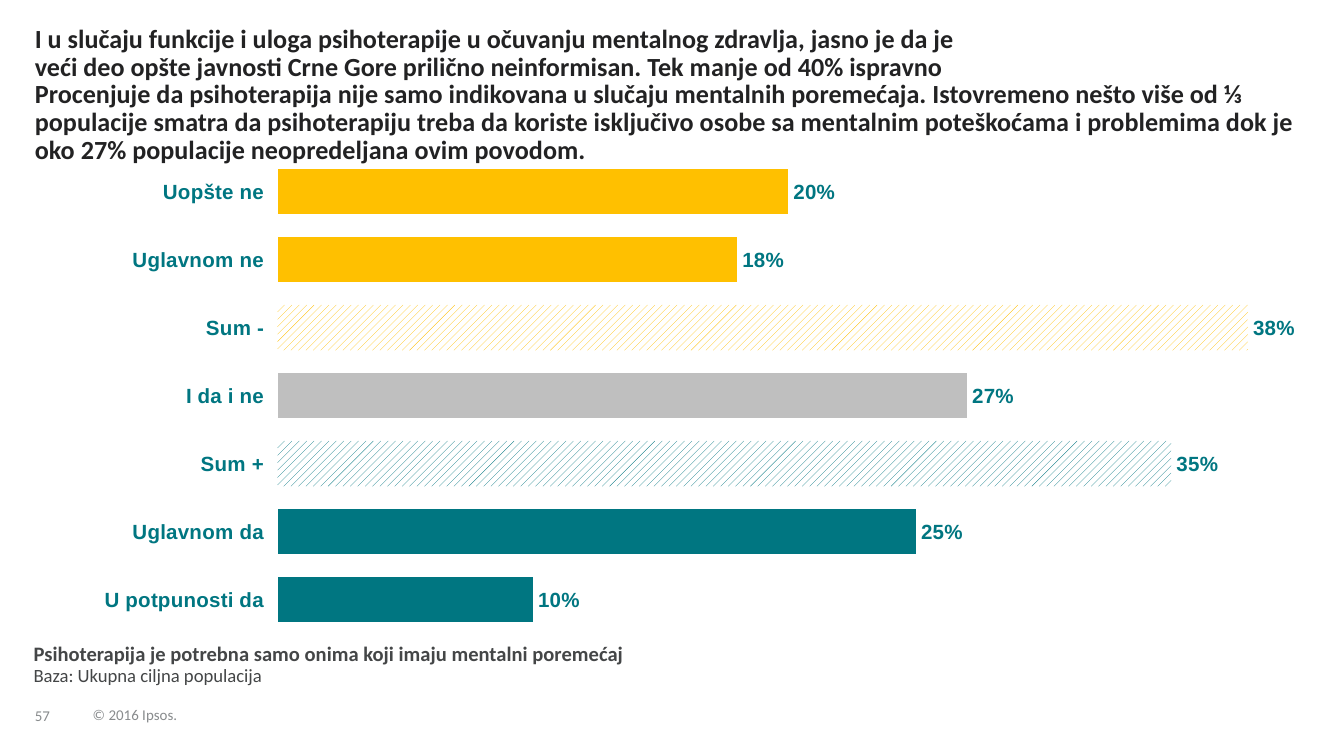
from lxml import etree
from pptx import Presentation
from pptx.chart.data import CategoryChartData
from pptx.dml.color import RGBColor
from pptx.enum.chart import XL_CHART_TYPE, XL_LABEL_POSITION, XL_TICK_LABEL_POSITION, XL_TICK_MARK
from pptx.enum.dml import MSO_PATTERN
from pptx.enum.text import MSO_ANCHOR
from pptx.oxml.ns import qn
from pptx.util import Pt

COLORS = {
    "heading": "222223",
    "caption": "444647",
    "footer": "888B8D",
    "yes": "007681",
    "no": "FFC000",
    "neutral": "BFBFBF",
    "white": "FFFFFF",
}


def color(name):
    return RGBColor.from_string(COLORS[name])


def add_text(text, left, top, width, height, size=14, bold=True, ink="heading",
             line_spacing=0.9, anchor=MSO_ANCHOR.TOP, wrap=True, second_line=None):
    """Add a text box; second_line follows a line break, 1 pt smaller and not bold."""
    box = slide.shapes.add_textbox(Pt(left), Pt(top), Pt(width), Pt(height))
    frame = box.text_frame
    frame.margin_left = frame.margin_right = frame.margin_top = frame.margin_bottom = 0
    frame.word_wrap = wrap
    frame.vertical_anchor = anchor
    paragraph = frame.paragraphs[0]
    paragraph.line_spacing = line_spacing
    lines = [(text, size, bold)]
    if second_line:
        lines.append((second_line, size - 1, False))
    for index, (content, points, heavy) in enumerate(lines):
        if index:
            paragraph.add_line_break()
        run = paragraph.add_run()
        run.text = content
        run.font.name = "Calibri"
        run.font.size = Pt(points)
        run.font.bold = heavy
        run.font.color.rgb = color(ink)


presentation = Presentation()
presentation.slide_width = Pt(720)
presentation.slide_height = Pt(405)
slide = presentation.slides.add_slide(presentation.slide_layouts[6])

# Footer
footer = dict(size=8, bold=False, ink="footer", line_spacing=0.85,
              anchor=MSO_ANCHOR.BOTTOM, wrap=False)
add_text("57", 18.7, 369.4, 24.5, 18.7, **footer)
add_text("© 2016 Ipsos.", 49.7, 374.4, 54.7, 13, **footer)

# Heading and caption
add_text("I u slučaju funkcije i uloga psihoterapije u očuvanju mentalnog zdravlja, "
         "jasno je da je veći deo opšte javnosti Crne Gore prilično neinformisan. "
         "Tek manje od 40% ispravno", 18.7, 13.7, 516.2, 30.2)
add_text("Psihoterapija je potrebna samo onima koji imaju mentalni poremećaj",
         18, 344.2, 684.7, 33.8, size=11, ink="caption", line_spacing=0.95,
         second_line="Baza: Ukupna ciljna populacija")

# Answers: label, percentage, colour, hatched subtotal
answers = [
    ("Uopšte ne", 20, "no", False),
    ("Uglavnom ne", 18, "no", False),
    ("Sum -", 38, "no", True),
    ("I da i ne", 27, "neutral", False),
    ("Sum +", 35, "yes", True),
    ("Uglavnom da", 25, "yes", False),
    ("U potpunosti da", 10, "yes", False),
]
chart_data = CategoryChartData(number_format='0"%"')
chart_data.categories = [answer[0] for answer in answers]
chart_data.add_series("Series 1", [answer[1] for answer in answers])
chart = slide.shapes.add_chart(XL_CHART_TYPE.BAR_CLUSTERED, Pt(18.7), Pt(79.2),
                               Pt(684), Pt(265.7), chart_data).chart
chart.has_legend = False
chart.has_title = False
chart.font.name = "Arial"
chart.font.size = Pt(11)
chart.font.bold = True
chart.font.color.rgb = color("yes")

# Axes
category_axis = chart.category_axis
category_axis.reverse_order = True
category_axis.major_tick_mark = XL_TICK_MARK.NONE
category_axis.tick_label_position = XL_TICK_LABEL_POSITION.LOW
category_axis.format.line.fill.background()
value_axis = chart.value_axis
value_axis.minimum_scale = 0
value_axis.maximum_scale = 40
value_axis.has_major_gridlines = False
value_axis.visible = False

# Bars
plot = chart.plots[0]
plot.gap_width = 50
plot.vary_by_categories = False
series = plot.series[0]
for index, (label, value, ink, hatched) in enumerate(answers):
    fill = series.points[index].format.fill
    if hatched:
        fill.patterned()
        fill.pattern = MSO_PATTERN.WIDE_UPWARD_DIAGONAL
        fill.fore_color.rgb = color(ink)
        fill.back_color.rgb = color("white")
    else:
        fill.solid()
        fill.fore_color.rgb = color(ink)

# Value labels
labels = series.data_labels
labels.show_value = True
labels.number_format = '0"%"'
labels.number_format_is_linked = False
labels.position = XL_LABEL_POSITION.OUTSIDE_END
labels.font.name = "Arial"
labels.font.size = Pt(11)
labels.font.bold = True
labels.font.color.rgb = color("yes")

# Fixed plot area
plot_area = plot_area = chart.plots[0]._element.getparent()
layout = plot_area.find(qn("c:layout"))
if layout is None:
    layout = etree.Element(qn("c:layout"))
    plot_area.insert(0, layout)
manual = etree.SubElement(layout, qn("c:manualLayout"))
for tag, setting in [("layoutTarget", "inner"), ("xMode", "edge"), ("yMode", "edge"),
                     ("x", "0.19"), ("y", "0.02"), ("w", "0.8"), ("h", "0.96")]:
    etree.SubElement(manual, qn(f"c:{tag}")).set("val", setting)

# Continuation of the heading
add_text("Procenjuje da psihoterapija nije samo indikovana u slučaju mentalnih poremećaja. "
         "Istovremeno nešto više od ⅓ populacije smatra da psihoterapiju treba da koriste "
         "isključivo osobe sa mentalnim poteškoćama i problemima dok je oko 27% populacije "
         "neopredeljana ovim povodom.", 18.7, 43.2, 684, 46.1)

presentation.save("out.pptx")
